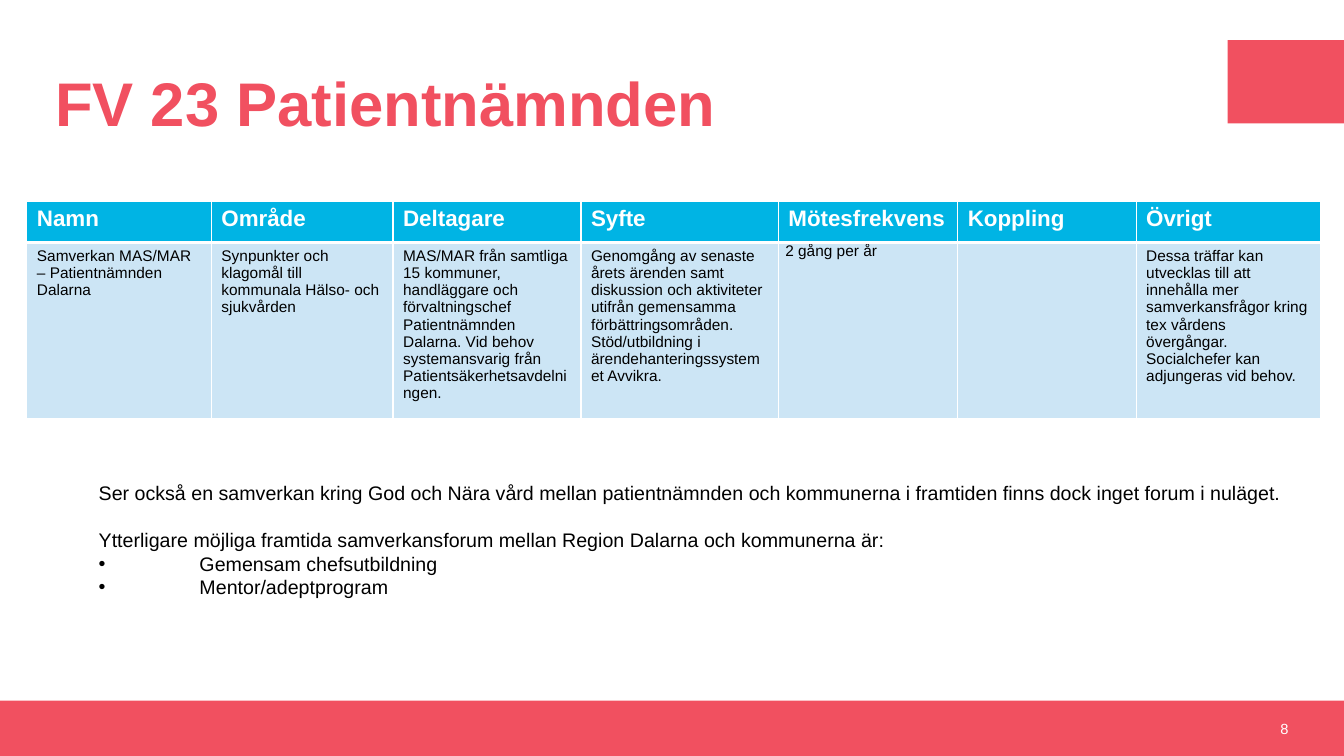
from pptx import Presentation
from pptx.dml.color import RGBColor
from pptx.enum.shapes import MSO_SHAPE
from pptx.enum.text import MSO_ANCHOR as ANCHOR, PP_ALIGN as ALIGN
from pptx.oxml.ns import qn
from pptx.util import Pt
from lxml.etree import SubElement

CORAL = RGBColor(0xF1, 0x50, 0x60)
CYAN = RGBColor(0x00, 0xB4, 0xE4)
PALE = RGBColor(0xCC, 0xE5, 0xF5)
WHITE = RGBColor(0xFF, 0xFF, 0xFF)
BLACK = RGBColor(0, 0, 0)
FONT = "Arial"
W, H = 960, 540
FOOTER_H = 39.5

# header, column width, body text
COLUMNS = [
    ("Namn", 131.8, "Samverkan MAS/MAR – Patientnämnden Dalarna"),
    ("Område", 129.8, "Synpunkter och klagomål till kommunala Hälso- och sjukvården"),
    ("Deltagare", 134.2, "MAS/MAR från samtliga 15 kommuner, handläggare och "
     "förvaltningschef Patientnämnden Dalarna. Vid behov systemansvarig från "
     "Patientsäkerhetsavdelningen."),
    ("Syfte", 141, "Genomgång av senaste årets ärenden samt diskussion och "
     "aktiviteter utifrån gemensamma förbättringsområden. Stöd/utbildning i "
     "ärendehanteringssystemet Avvikra."),
    ("Mötesfrekvens", 128.2, "2 gång per år"),
    ("Koppling", 127.4, ""),
    ("Övrigt", 131.8, "Dessa träffar kan utvecklas till att innehålla mer "
     "samverkansfrågor kring tex vårdens övergångar. Socialchefer kan "
     "adjungeras vid behov."),
]
FREQUENCY_COL = 4
NOTES = [
    "Ser också en samverkan kring God och Nära vård mellan patientnämnden och "
    "kommunerna i framtiden finns dock inget forum i nuläget.",
    "Ytterligare möjliga framtida samverkansforum mellan Region Dalarna och "
    "kommunerna är:",
]
FORUMS = ["Gemensam chefsutbildning", "Mentor/adeptprogram"]


def set_font(p, size, color, bold=False):
    style = {"name": FONT, "size": Pt(size), "bold": bold}
    for name, value in style.items():
        setattr(p.font, name, value)
    p.font.color.rgb = color


def add_block(s, x, y, w, h):
    sp = s.shapes.add_shape(MSO_SHAPE.RECTANGLE, Pt(x), Pt(y), Pt(w), Pt(h))
    sp.shadow.inherit = False
    sp.fill.solid()
    sp.fill.fore_color.rgb = CORAL
    sp.line.fill.background()


def add_text(s, x, y, w, h, anchor=ANCHOR.TOP, wrap=True):
    tf = s.shapes.add_textbox(Pt(x), Pt(y), Pt(w), Pt(h)).text_frame
    tf.word_wrap = wrap
    tf.vertical_anchor = anchor
    return tf


def add_title(s, x, y, w, h):
    p = add_text(s, x, y, w, h, ANCHOR.MIDDLE).paragraphs[0]
    p.text = "FV 23 Patientnämnden"
    p.line_spacing = 0.9
    set_font(p, 44, CORAL, True)


def add_footer(s, x, y, w, h):
    add_block(s, x, y, w, h)
    p = add_text(s, x + w - 248.6, y, 216, h, ANCHOR.MIDDLE).paragraphs[0]
    p.text = "8"
    p.alignment = ALIGN.RIGHT
    set_font(p, 10.5, WHITE)


def set_borders(cell, **widths):
    tc_pr = cell._tc.get_or_add_tcPr()
    for side in "LRTB":
        ln = SubElement(tc_pr, qn("a:ln" + side), w=str(Pt(widths.get(side, 1))))
        fill = SubElement(ln, qn("a:solidFill"))
        SubElement(fill, qn("a:srgbClr"), val=str(WHITE))


def fill_cell(cell, text, size, color, fill, bold, **borders):
    set_borders(cell, **borders)
    cell.fill.solid()
    cell.fill.fore_color.rgb = fill
    cell.text = text
    set_font(cell.text_frame.paragraphs[0], size, color, bold)


def add_forum_table(s, x, y, row_h):
    """Both rows start at row_h; the body row grows with its text."""
    width = sum(w for _, w, _ in COLUMNS)
    table = s.shapes.add_table(2, len(COLUMNS), Pt(x), Pt(y), Pt(width),
                               Pt(2 * row_h)).table
    for i, (header, w, body) in enumerate(COLUMNS):
        table.columns[i].width = Pt(w)
        fill_cell(table.cell(0, i), header, 16, WHITE, CYAN, True, B=3)
        fill_cell(table.cell(1, i), body, 11, BLACK, PALE, False, T=3)
    cell = table.cell(1, FREQUENCY_COL)
    margins = {"left": 5, "right": 5, "top": 0, "bottom": 0}
    for side, value in margins.items():
        setattr(cell, "margin_" + side, Pt(value))
    cell.text_frame.paragraphs[0].space_after = Pt(6)


def add_notes(s, x, y, w, h):
    tf = add_text(s, x, y, w, h, wrap=False)
    for i, text in enumerate(NOTES + FORUMS):
        p = tf.add_paragraph() if i else tf.paragraphs[0]
        p.text = text
        if text in FORUMS:
            p_pr = p._p.get_or_add_pPr()
            p_pr.set("marL", str(Pt(72)))
            p_pr.set("indent", str(-Pt(72)))
            SubElement(p_pr, qn("a:buFont"), typeface=FONT)
            SubElement(p_pr, qn("a:buChar"), char="•")
        set_font(p, 14, BLACK)
    tf.paragraphs[1].space_before = Pt(17)


def main():
    prs = Presentation()
    prs.slide_width, prs.slide_height = Pt(W), Pt(H)
    s = prs.slides.add_slide(prs.slide_layouts[6])
    add_footer(s, 0, H - FOOTER_H, W, FOOTER_H)
    add_block(s, W - 83.2, 28.6, 83.2, 59.6)
    add_title(s, 32.4, 28.8, 836, 95)
    add_forum_table(s, 19.2, 144, 29.2)
    add_notes(s, 63.4, 340, 862.6, 92)
    prs.save("out.pptx")


if __name__ == "__main__":
    main()
